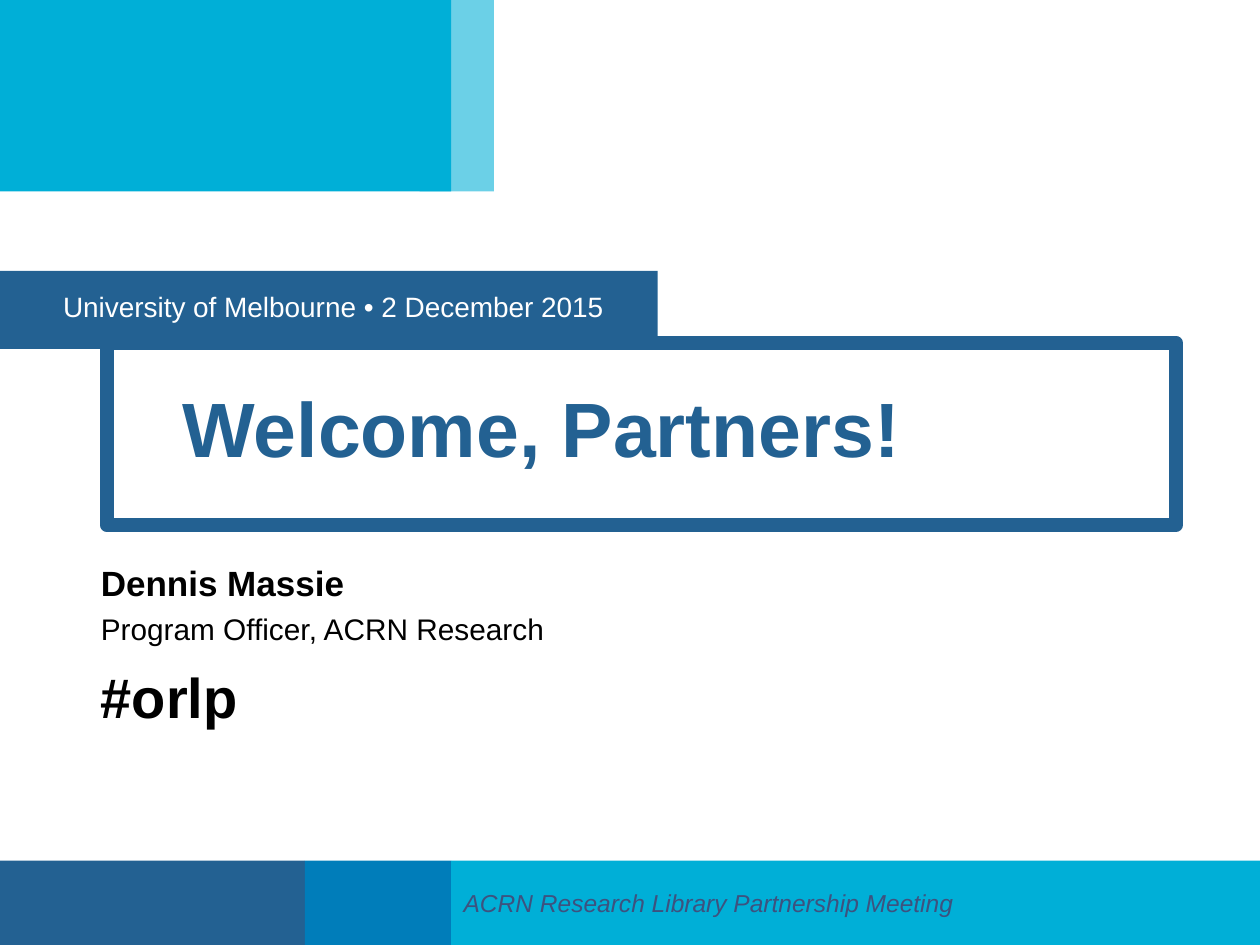
from dataclasses import dataclass

from lxml import etree
from pptx import Presentation
from pptx.dml.color import RGBColor
from pptx.enum.shapes import MSO_SHAPE
from pptx.enum.text import MSO_ANCHOR, MSO_AUTO_SIZE, PP_ALIGN
from pptx.oxml.ns import qn
from pptx.util import Pt

RECT = MSO_SHAPE.RECTANGLE
TOP, MIDDLE = MSO_ANCHOR.TOP, MSO_ANCHOR.MIDDLE
LEFT = PP_ALIGN.LEFT
NO_AUTOFIT = MSO_AUTO_SIZE.NONE


@dataclass(frozen=True)
class Theme:
    font: str = "Arial"
    cyan: str = "00AFD7"
    blue: str = "007DBA"
    navy: str = "236192"
    slate: str = "3D527F"
    white: str = "FFFFFF"
    black: str = "000000"
    title: float = 44
    hashtag: float = 32
    speaker: float = 20
    role: float = 17
    venue: float = 16
    footer: float = 14


THEME = Theme()
SLIDE_W, SLIDE_H = 720, 540
HEADER_W, HEADER_H = 257.8, 109.4
FOOTER_TOP = 491.8
FOOTER_SPLIT = 174.2


def add_block(slide, left, top, width, height, color, opacity=None):
    """Add a plain filled rectangle, see-through if an opacity in percent is given."""
    block = slide.shapes.add_shape(RECT, Pt(left), Pt(top), Pt(width), Pt(height))
    block.shadow.inherit = False
    block.fill.solid()
    block.fill.fore_color.rgb = RGBColor.from_string(color)
    block.line.fill.background()
    if opacity is not None:
        srgb = block.fill._xPr.find(qn("a:solidFill")).find(qn("a:srgbClr"))
        etree.SubElement(srgb, qn("a:alpha")).set("val", str(opacity * 1000))
    return block


def set_frame(shape, insets, anchor=TOP):
    """Set insets (left, top, right, bottom) and anchor; return the text frame."""
    frame = shape.text_frame
    frame.auto_size = NO_AUTOFIT
    frame.word_wrap = True
    frame.vertical_anchor = anchor
    (frame.margin_left, frame.margin_top,
     frame.margin_right, frame.margin_bottom) = map(Pt, insets)
    return frame


def write_line(paragraph, text, size, color, bold=False, italic=False):
    paragraph.alignment = LEFT
    paragraph.line_spacing = 1.0
    run = paragraph.add_run()
    run.text = text
    run.font.name = THEME.font
    run.font.size = Pt(size)
    run.font.bold = bold
    run.font.italic = italic
    run.font.color.rgb = RGBColor.from_string(color)


def add_text(slide, left, top, width, height, insets):
    box = slide.shapes.add_textbox(Pt(left), Pt(top), Pt(width), Pt(height))
    return set_frame(box, insets)


def add_header(slide):
    add_block(slide, 0, 0, HEADER_W, HEADER_H, THEME.cyan)
    add_block(slide, 239.8, 0, 42.5, HEADER_H, THEME.cyan, opacity=58)


def add_footer(slide):
    edges = (0, FOOTER_SPLIT, HEADER_W, SLIDE_W)
    colors = (THEME.navy, THEME.blue, THEME.cyan)
    for left, right, color in zip(edges, edges[1:], colors):
        band = add_block(slide, left, FOOTER_TOP, right - left,
                         SLIDE_H - FOOTER_TOP, color)
    # The last band carries the meeting name
    meeting = set_frame(band, (7.2, 3.6, 7.2, 3.6), MIDDLE)
    write_line(meeting.paragraphs[0], "ACRN Research Library Partnership Meeting",
               THEME.footer, THEME.slate, italic=True)


def add_venue(slide):
    banner = add_block(slide, 0, 154.8, 375.8, 44.6, THEME.navy)
    venue = set_frame(banner, (36, 10.8, 21.6, 14.4))
    write_line(venue.paragraphs[0], "University of Melbourne • 2 December 2015",
               THEME.venue, THEME.white)


def format_title(slide):
    title = slide.shapes.title
    title.left, title.top, title.width, title.height = map(
        Pt, (61.2, 195.8, 610.6, 104.4))
    title.line.color.rgb = RGBColor.from_string(THEME.navy)
    title.line.width = Pt(8)
    heading = set_frame(title, (43.2, 21.6, 36, 28.8))
    write_line(heading.paragraphs[0], "Welcome, Partners!",
               THEME.title, THEME.navy, bold=True)


def add_speaker(slide):
    speaker = add_text(slide, 57.6, 317.2, 150, 31.7, (0, 3.6, 0, 3.6))
    write_line(speaker.paragraphs[0], "Dennis Massie",
               THEME.speaker, THEME.black, bold=True)

    details = add_text(slide, 57.6, 349, 262.8, 70.6, (0, 0, 0, 3.6))
    write_line(details.paragraphs[0], "Program Officer, ACRN Research",
               THEME.role, THEME.black)
    hashtag = details.add_paragraph()
    hashtag.space_before = Pt(9)
    write_line(hashtag, "#orlp", THEME.hashtag, THEME.black, bold=True)


def main():
    prs = Presentation()
    prs.slide_width, prs.slide_height = Pt(SLIDE_W), Pt(SLIDE_H)
    slide = prs.slides.add_slide(prs.slide_layouts[5])

    # Colour bands at the top and bottom
    add_header(slide)
    add_footer(slide)

    # Venue, title and speaker
    add_venue(slide)
    format_title(slide)
    add_speaker(slide)

    prs.save("out.pptx")


if __name__ == "__main__":
    main()
